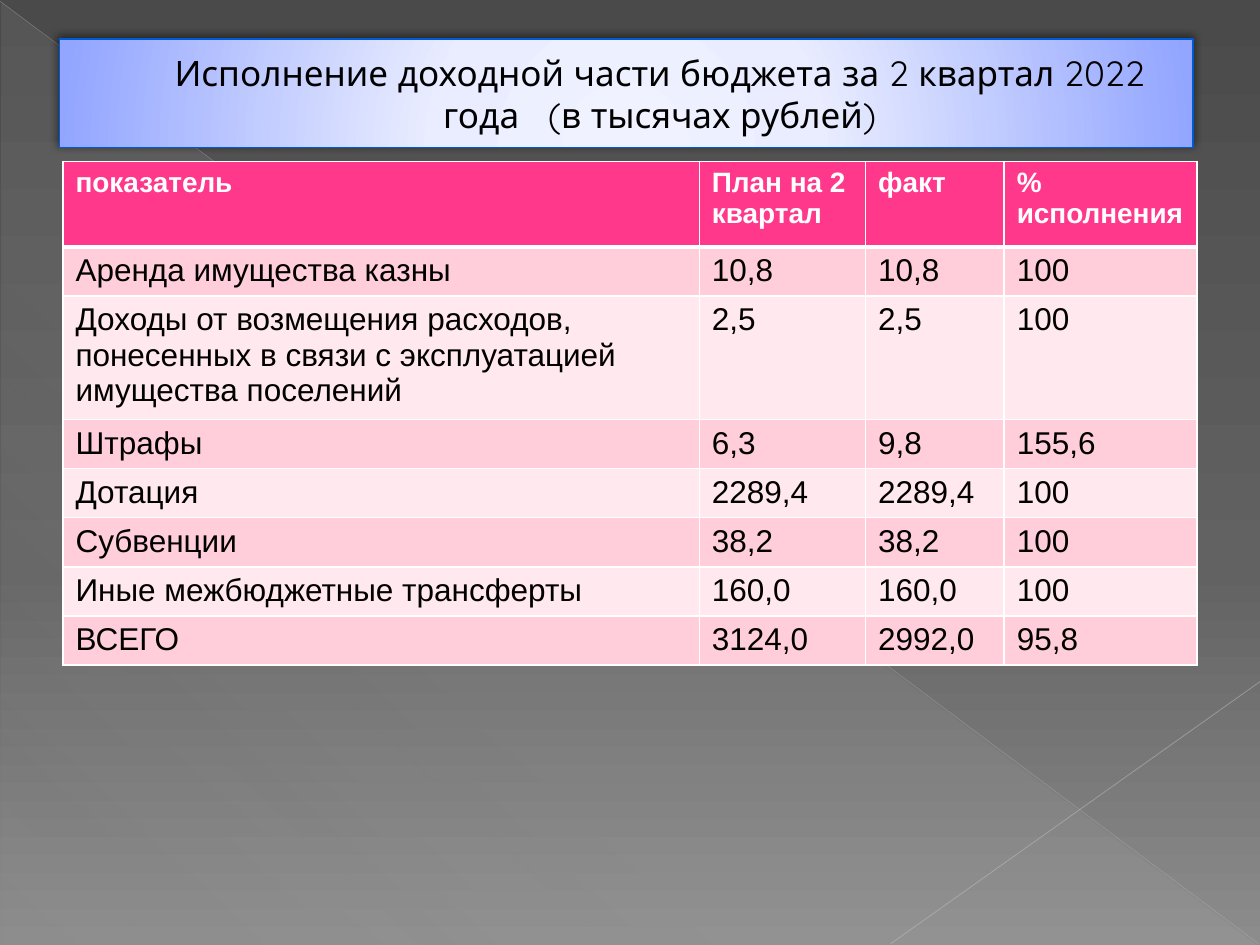
from dataclasses import dataclass

from lxml import etree
from pptx import Presentation
from pptx import util as u
from pptx.dml.color import RGBColor
from pptx.enum import shapes, text
from pptx.oxml.ns import qn


@dataclass(frozen=True)
class Theme:
    white: str = "FFFFFF"
    black: str = "000000"
    header: str = "FF388C"
    bands: tuple = ("FFCEDA", "FFE8EE")
    title_line: str = "005BD3"
    title_outline: str = "B12761"
    background: tuple = ((0, "4A4A4A", 100), (60, "626262", 100), (100, "8C8C8C", 100))
    sheen: tuple = ((0, "D2D2D2", 10), (70, "D2D2D2", 8), (100, "D2D2D2", 1))
    title_fill: tuple = ((0, "F0F2FF", 100), (34, "EAEDFF", 100), (100, "92A5FF", 100))
    title_font: str = "Quicksand"
    table_font: str = "Arial"
    title_size: int = 20
    header_size: int = 16
    body_size: int = 18


THEME = Theme()
TITLE = "Исполнение доходной части бюджета за 2 квартал 2022 года   (в тысячах рублей)"
COLUMN_WIDTHS = (5.05, 1.32, 1.1, 1.53)
ROW_HEIGHTS = (0.68, 0.39, 0.98) + (0.39,) * 5
ROWS = (
    ("показатель", "План на 2 квартал", "факт", "% исполнения"),
    ("Аренда имущества казны", "10,8", "10,8", "100"),
    ("Доходы от возмещения расходов, понесенных в связи с эксплуатацией "
     "имущества поселений", "2,5", "2,5", "100"),
    ("Штрафы", "6,3", "9,8", "155,6"),
    ("Дотация", "2289,4", "2289,4", "100"),
    ("Субвенции", "38,2", "38,2", "100"),
    ("Иные межбюджетные трансферты", "160,0", "160,0", "100"),
    ("ВСЕГО", "3124,0", "2992,0", "95,8"),
)


def add_node(parent, tag, **attrs):
    node = etree.SubElement(parent, qn(tag))
    for name, value in attrs.items():
        node.set(name, str(value))
    return node


def add_color(parent, color, opacity=100):
    node = add_node(parent, "a:srgbClr", val=color)
    if opacity < 100:
        add_node(node, "a:alpha", val=opacity * 1000)


def set_gradient(fill, props, stops, angle=None):
    """Fill with a gradient: linear at the angle, or circular if there is none."""
    fill.solid()
    solid = props.find(qn("a:solidFill"))
    grad = etree.Element(qn("a:gradFill"), rotWithShape="1")
    stop_list = add_node(grad, "a:gsLst")
    for position, color, opacity in stops:
        add_color(add_node(stop_list, "a:gs", pos=position * 1000), color, opacity)
    if angle is None:
        circle = add_node(grad, "a:path", path="circle")
        add_node(circle, "a:fillToRect", l=50000, t=155000, r=50000, b=-55000)
    else:
        add_node(grad, "a:lin", ang=angle * 60000, scaled=0)
    props.replace(solid, grad)


def add_box(s, kind, left, top, width, height):
    sp = s.shapes.add_shape(kind, u.Inches(left), u.Inches(top),
                            u.Inches(width), u.Inches(height))
    sp.shadow.inherit = False
    return sp


def add_line(s, start, end, color, width, opacity):
    points = [u.Inches(v) for v in start + end]
    line = s.shapes.add_connector(shapes.MSO_CONNECTOR.STRAIGHT, *points)
    line.line.width = u.Pt(width)
    line.line.color.rgb = RGBColor.from_string(color)
    props = line.element.spPr
    add_node(props.find(".//" + qn("a:srgbClr")), "a:alpha", val=opacity * 1000)
    add_node(props, "a:effectLst")


def add_backdrop(s):
    fill = s.background.fill
    fill.solid()
    set_gradient(fill, s.element.xpath(".//p:bgPr")[0], THEME.background, 90)
    sheen = add_box(s, shapes.MSO_SHAPE.RIGHT_TRIANGLE, 0.01, 0.02, 9.98, 7.48)
    set_gradient(sheen.fill, sheen.element.spPr, THEME.sheen, 133)
    sheen.line.fill.background()
    add_line(s, (0, 0.01), (9.99, 7.49), "BFBFBF", 0.39, 35)
    add_line(s, (10, 5.41), (7.07, 7.49), "C6C6C6", 0.47, 45)


def style_run(r, font, size, color, bold=False):
    r.font.name = font
    r.font.size = u.Pt(size)
    r.font.bold = bold
    r.font.color.rgb = RGBColor.from_string(color)


def add_title(s):
    sp = add_box(s, shapes.MSO_SHAPE.RECTANGLE, 0.47, 0.31, 9, 0.86)
    props = sp.element.spPr
    set_gradient(sp.fill, props, THEME.title_fill)
    sp.line.color.rgb = RGBColor.from_string(THEME.title_line)
    sp.line.width = u.Pt(0.75)
    shadow = add_node(props.find(qn("a:effectLst")), "a:outerShdw", blurRad=u.Pt(5),
                      dist=u.Pt(2), dir=245 * 60000, rotWithShape=0)
    add_color(shadow, THEME.black, 50)

    tf = sp.text_frame
    tf.word_wrap = True
    tf.vertical_anchor = text.MSO_ANCHOR.MIDDLE
    p = tf.paragraphs[0]
    p.text = TITLE
    p.alignment = text.PP_ALIGN.CENTER
    p._p.get_or_add_pPr().set("marL", str(u.Inches(0.53)))
    r = p.runs[0]
    style_run(r, THEME.title_font, THEME.title_size, THEME.black)
    outline = etree.Element(qn("a:ln"), w=str(u.Pt(0.5)))
    add_color(add_node(outline, "a:solidFill"), THEME.title_outline)
    r._r.get_or_add_rPr().insert(0, outline)


def set_borders(cell, top, bottom):
    props = cell._tc.get_or_add_tcPr()
    for side, width in (("L", 1), ("R", 1), ("T", top), ("B", bottom)):
        line = add_node(props, "a:ln" + side, w=u.Pt(width))
        add_color(add_node(line, "a:solidFill"), THEME.white)


def style_cell(cell, row):
    header = row == 0
    set_borders(cell, top=3 if row == 1 else 1, bottom=3 if header else 1)
    fill = THEME.header if header else THEME.bands[(row - 1) % 2]
    cell.fill.solid()
    cell.fill.fore_color.rgb = RGBColor.from_string(fill)
    style_run(cell.text_frame.paragraphs[0].runs[0], THEME.table_font,
              THEME.header_size if header else THEME.body_size,
              THEME.white if header else THEME.black, header)


def add_budget_table(s):
    frame = s.shapes.add_table(len(ROWS), len(COLUMN_WIDTHS), u.Inches(0.5), u.Inches(1.28),
                               u.Inches(sum(COLUMN_WIDTHS)), u.Inches(sum(ROW_HEIGHTS)))
    table = frame.table
    for column, width in zip(table.columns, COLUMN_WIDTHS):
        column.width = u.Inches(width)
    for i, (values, height) in enumerate(zip(ROWS, ROW_HEIGHTS)):
        table.rows[i].height = u.Inches(height)
        for j, value in enumerate(values):
            cell = table.cell(i, j)
            cell.text_frame.text = value
            style_cell(cell, i)


def main():
    prs = Presentation()
    prs.slide_width, prs.slide_height = u.Inches(10), u.Inches(7.5)
    s = prs.slides.add_slide(prs.slide_layouts[6])
    add_backdrop(s)
    add_title(s)
    add_budget_table(s)
    prs.save("out.pptx")


if __name__ == "__main__":
    main()
